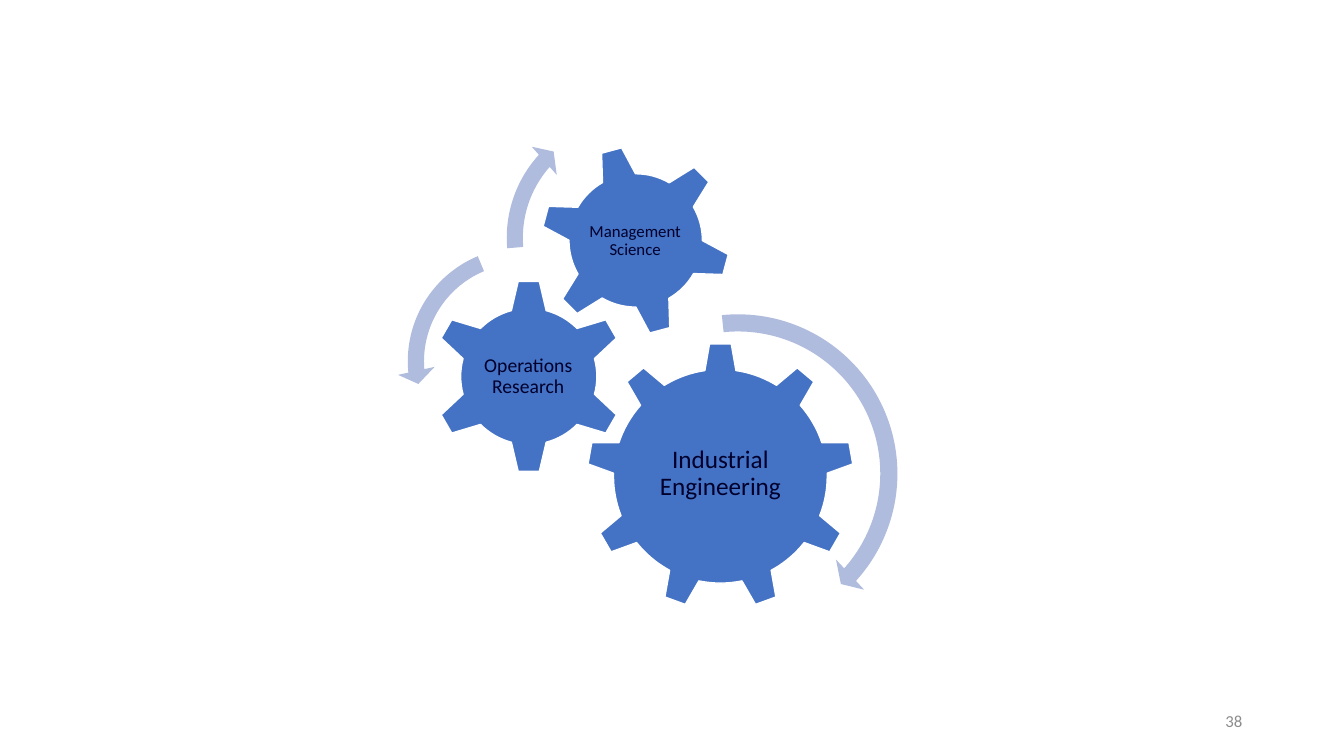
from dataclasses import dataclass

import pptx
import pptx.dml.color
import pptx.enum.shapes
import pptx.enum.text
import pptx.slide
import pptx.util

Inches = pptx.util.Inches
Pt = pptx.util.Pt
RGBColor = pptx.dml.color.RGBColor
Shape = pptx.enum.shapes.MSO_SHAPE
Align = pptx.enum.text.PP_ALIGN

GEAR_BLUE = RGBColor(0x44, 0x72, 0xC4)
ARROW_BLUE = RGBColor(0xB0, 0xBC, 0xDE)
LABEL_NAVY = RGBColor(0x00, 0x00, 0x2C)
NUMBER_GREY = RGBColor(0x8C, 0x8C, 0x8C)
WHITE = RGBColor(0xFF, 0xFF, 0xFF)


@dataclass
class GearPage:
    page: pptx.slide.Slide
    font_name: str = "Calibri"

    def square_shape(self, kind, left, top, side, fill):
        shape = self.page.shapes.add_shape(
            kind, Inches(left), Inches(top), Inches(side), Inches(side))
        shape.shadow.inherit = False
        shape.fill.solid()
        shape.fill.fore_color.rgb = fill
        return shape

    def gear(self, kind, left, top, side, rotation=0):
        gear = self.square_shape(kind, left, top, side, GEAR_BLUE)
        gear.rotation = rotation
        gear.line.color.rgb = WHITE
        gear.line.width = Pt(1)

    def arrow(self, kind, left, top, side, adjustments):
        """Draw a curved arrow from its thickness, head and angle settings."""
        arrow = self.square_shape(kind, left, top, side, ARROW_BLUE)
        arrow.line.fill.background()
        for index, value in enumerate(adjustments):
            arrow.adjustments[index] = value

    def text(self, words, left, top, width, height, size, color, align):
        box = self.page.shapes.add_textbox(
            Inches(left), Inches(top), Inches(width), Inches(height))
        frame = box.text_frame
        frame.word_wrap = True
        frame.vertical_anchor = pptx.enum.text.MSO_ANCHOR.MIDDLE
        para = frame.paragraphs[0]
        para.text = words
        para.alignment = align
        para.font.name = self.font_name
        para.font.size = Pt(size)
        para.font.color.rgb = color
        return frame

    def gear_label(self, words, left, top, width, height, size, inset):
        frame = self.text(words, left, top, width, height, size,
                          LABEL_NAVY, Align.CENTER)
        frame.margin_left = frame.margin_right = Inches(inset)
        frame.margin_top = frame.margin_bottom = Inches(inset)
        frame.paragraphs[0].line_spacing = 0.9


def main():
    deck = pptx.Presentation()
    deck.slide_width = Inches(13.33)
    deck.slide_height = Inches(7.5)
    gears = GearPage(deck.slides.add_slide(deck.slide_layouts[6]))

    gears.gear(Shape.GEAR_9, 5.82, 3.4, 2.65)
    gears.gear_label("Industrial Engineering", 6.35, 4.02, 1.59, 1.36, 18, 0.03)
    gears.gear(Shape.GEAR_6, 4.28, 2.77, 1.93)
    gears.gear_label("Operations Research", 4.76, 3.26, 0.96, 0.95, 14, 0.02)
    gears.gear(Shape.GEAR_6, 5.36, 1.44, 1.89, rotation=345)
    gears.gear_label("Management Science", 5.77, 1.86, 1.06, 1.06, 12, 0.02)

    gears.arrow(Shape.CIRCULAR_ARROW, 5.62, 3, 3.4,
                (0.05, 2.99, 25.21, 158.51, 0.06))
    gears.arrow(Shape.LEFT_CIRCULAR_ARROW, 3.94, 2.35, 2.47,
                (0.065, 4.3, 104.89, 148.38, 0.075))
    gears.arrow(Shape.CIRCULAR_ARROW, 4.92, 1.03, 2.66,
                (0.06, 3.94, 133.14, 105.08, 0.07))

    gears.text("38", 9.42, 6.95, 3, 0.4, 12, NUMBER_GREY, Align.RIGHT)
    deck.save("out.pptx")


if __name__ == "__main__":
    main()
